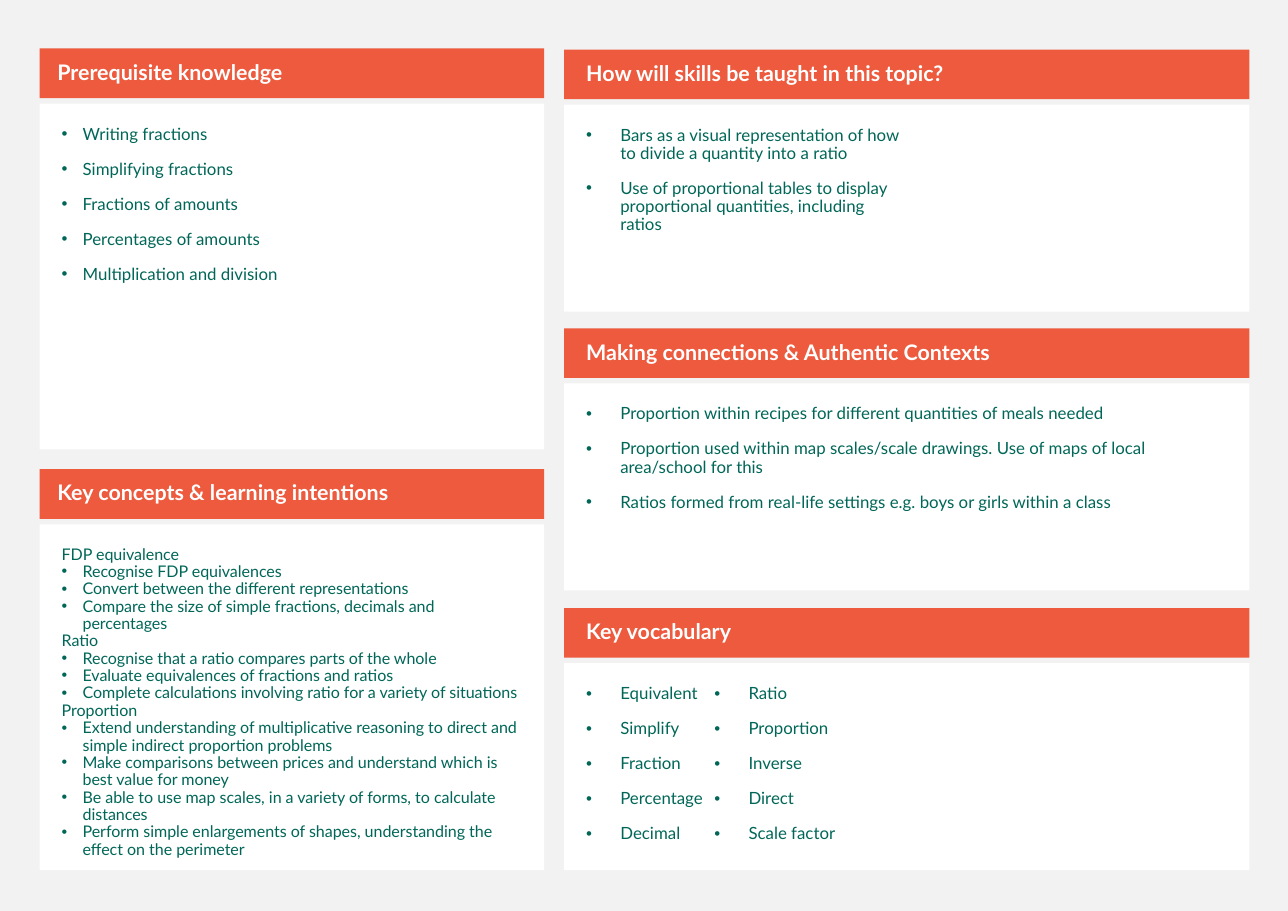
"""Build the ratio and proportion topic overview on a grid of hundredths of an inch."""
from lxml.etree import SubElement
from pptx import Presentation
from pptx.dml.color import RGBColor
from pptx.enum.shapes import MSO_SHAPE
from pptx.enum.text import MSO_ANCHOR, PP_ALIGN
from pptx.oxml.ns import qn
from pptx.util import Inches, Pt

HUES = {"back": "F2F2F2", "head": "ED5A3E", "card": "FFFFFF", "text": "006758"}
CELL = Inches(0.01)
HEAD, DROP, PAD = 45, 50, 20


def box(area, hue, pads, anchor):
    """Draw one plain rectangle and return its text frame."""
    rect = deck.shapes.add_shape(MSO_SHAPE.RECTANGLE, *(n * CELL for n in area))
    rect.shadow.inherit = False
    rect.fill.solid()
    rect.fill.fore_color.rgb = RGBColor.from_string(HUES[hue])
    rect.line.fill.background()
    frame = rect.text_frame
    frame.word_wrap = True
    frame.vertical_anchor = anchor
    (frame.margin_left, frame.margin_top,
     frame.margin_right, frame.margin_bottom) = (n * CELL for n in pads)
    return frame


def write(frame, lines, size, hue, space=11, dent=0, plain=(), bold=False):
    """Fill a frame with lines, bulleted where an indent is given."""
    for i, line in enumerate(lines):
        para = frame.add_paragraph() if i else frame.paragraphs[0]
        para.text = line
        para.alignment = PP_ALIGN.LEFT
        para.line_spacing = 0.9
        para.space_before = Pt(space)
        if dent and line not in plain:
            props = para._p.get_or_add_pPr()
            props.set("marL", str(dent * CELL))
            props.set("indent", str(-dent * CELL))
            SubElement(props, qn("a:buFont")).set("typeface", "Arial")
            SubElement(props, qn("a:buChar")).set("char", "•")
        font = para.font
        font.name, font.size, font.bold = "Lato", Pt(size), bold
        font.color.rgb = RGBColor.from_string(HUES[hue])


LEFT = [
    ("Prerequisite knowledge", 1, 11, 11, [
        "Writing fractions",
        "Simplifying fractions",
        "Fractions of amounts",
        "Percentages of amounts",
        "Multiplication and division"]),
    ("Key concepts & learning intentions", 1, 10.5, 0, [
        "FDP equivalence",
        "Recognise FDP equivalences",
        "Convert between the different representations",
        "Compare the size of simple fractions, decimals and percentages",
        "Ratio",
        "Recognise that a ratio compares parts of the whole",
        "Evaluate equivalences of fractions and ratios",
        "Complete calculations involving ratio for a variety of situations",
        "Proportion",
        "Extend understanding of multiplicative reasoning to direct and "
        "simple indirect proportion problems",
        "Make comparisons between prices and understand which is best value for money",
        "Be able to use map scales, in a variety of forms, to calculate distances",
        "Perform simple enlargements of shapes, understanding the effect on the perimeter"]),
]
RIGHT = [
    ("How will skills be taught in this topic?", 2, 11, 11, [
        "Bars as a visual representation of how to divide a quantity into a ratio",
        "Use of proportional tables to display proportional quantities, including ratios"]),
    ("Making connections & Authentic Contexts", 1, 11, 11, [
        "Proportion within recipes for different quantities of meals needed",
        "Proportion used within map scales/scale drawings. "
        "Use of maps of local area/school for this",
        "Ratios formed from real-life settings e.g. boys or girls within a class"]),
    ("Key vocabulary", 5, 11, 11, [
        "Equivalent", "Simplify", "Fraction", "Percentage", "Decimal",
        "Ratio", "Proportion", "Inverse", "Direct", "Scale factor"]),
]
SIDES = [
    (LEFT, 36, 458, 44, 382, 314, 16, 19, ("FDP equivalence", "Ratio", "Proportion")),
    (RIGHT, 512, 622, 45, 253.5, 188, 20, 31, ()),
]

show = Presentation()
show.slide_width, show.slide_height = 1169 * CELL, 827 * CELL
deck = show.slides.add_slide(show.slide_layouts[6])
deck.background.fill.solid()
deck.background.fill.fore_color.rgb = RGBColor.from_string(HUES["back"])

for cards, left, wide, top, pitch, tall, edge, dent, plain in SIDES:
    for row, (title, cols, size, space, lines) in enumerate(cards):
        y = int(top + row * pitch)
        frame = box((left, y + DROP, wide, tall), "card", [PAD] * 4, MSO_ANCHOR.TOP)
        if cols > 1:
            frame._txBody.bodyPr.set("numCol", str(cols))
        subs = plain if space == 0 else ()
        write(frame, lines, size, "text", space, dent, subs)
        frame = box((left, y, wide, HEAD), "head", (edge, 5, 10, 5), MSO_ANCHOR.MIDDLE)
        write(frame, [title], 14, "card", bold=True)

show.save("out.pptx")
